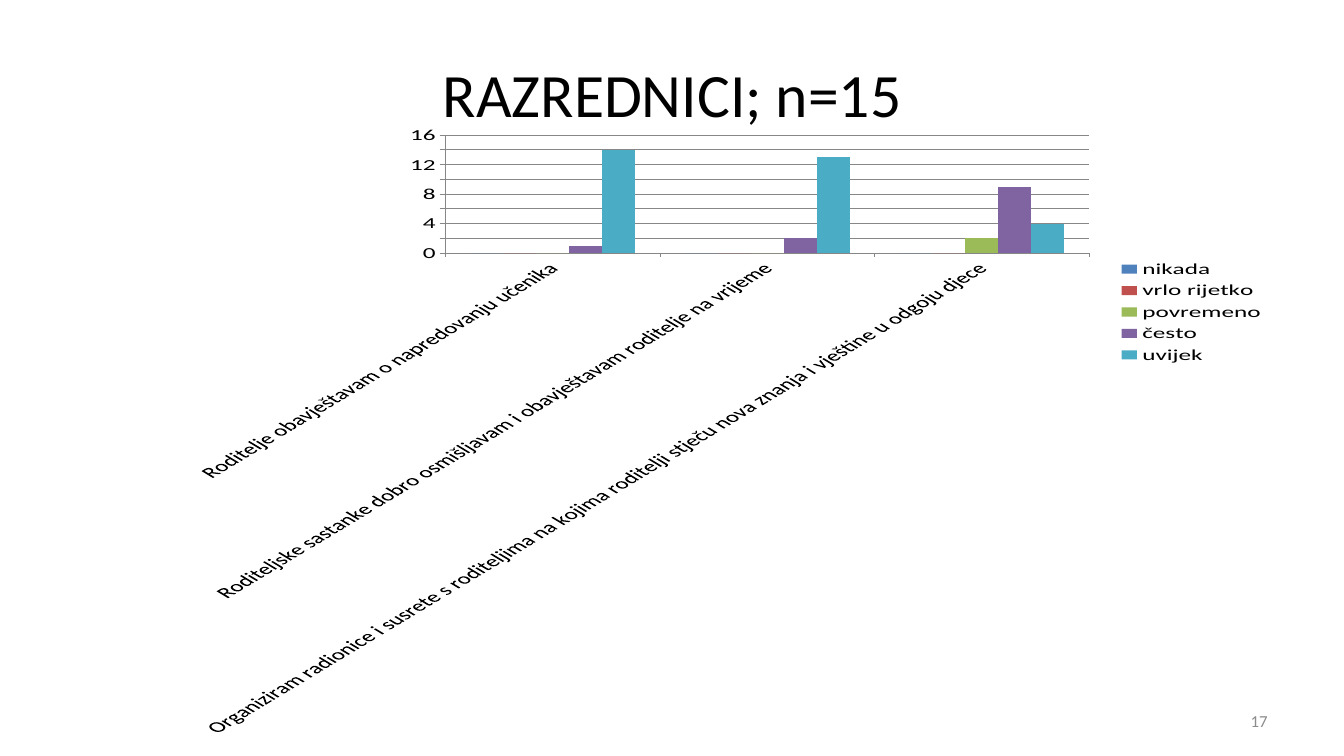
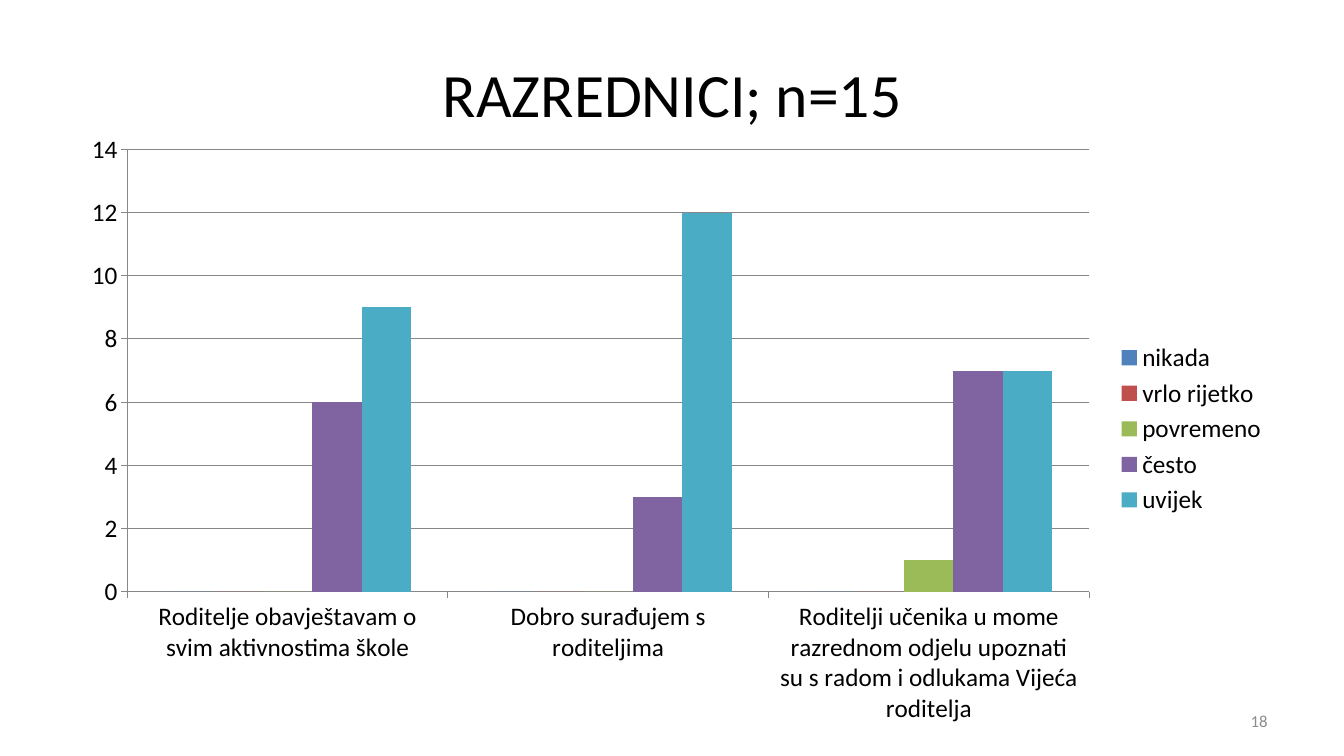
from pptx import Presentation
from pptx.chart.data import CategoryChartData
from pptx.dml.color import RGBColor
from pptx.enum.chart import XL_CHART_TYPE as ChartType, XL_LEGEND_POSITION as LegendPosition
from pptx.enum.chart import XL_TICK_MARK as TickMark
from pptx.enum.text import MSO_ANCHOR as Anchor, PP_ALIGN as Align
from pptx.util import Emu, Pt

PX = 9144
FONT = "Calibri"
BLACK, GREY, AXIS_GREY = "000000", "8C8C8C", "878787"
TITLE = "RAZREDNICI; n=15"
TITLE_AREA = (67, 30, 1200, 125)
NUMBER_AREA = (956, 695, 311, 40)
ANSWERS = [
    ("nikada", "4F81BD"),
    ("vrlo rijetko", "C0504D"),
    ("povremeno", "9BBB59"),
    ("često", "8064A2"),
    ("uvijek", "4BACC6"),
]
SLIDES = [
    {
        "number": 17,
        "area": (67, 125, 1200, 606),
        "top_value": 16,
        "statements": {
            "Roditelje obavještavam o napredovanju učenika": (0, 0, 0, 1, 14),
            "Roditeljske sastanke dobro osmišljavam i obavještavam roditelje na vrijeme":
                (0, 0, 0, 2, 13),
            "Organiziram radionice i susrete s roditeljima na kojima roditelji stječu "
            "nova znanja i vještine u odgoju djece": (0, 0, 2, 9, 4),
        },
    },
    {
        "number": 18,
        "area": (67, 121, 1200, 609),
        "top_value": 14,
        "statements": {
            "Roditelje obavještavam o svim aktivnostima škole": (0, 0, 0, 6, 9),
            "Dobro surađujem s roditeljima": (0, 0, 0, 3, 12),
            "Roditelji učenika u mome razrednom odjelu upoznati su s radom i odlukama "
            "Vijeća roditelja": (0, 0, 1, 7, 7),
        },
    },
]


def px(*lengths):
    """Turn pixel lengths into EMU."""
    return [Emu(length * PX) for length in lengths]


def color(value):
    """Turn a hex string into a colour."""
    return RGBColor.from_string(value)


def style_font(font, size, value):
    """Set the shared typeface with a size and colour."""
    font.name, font.size = FONT, Pt(size)
    font.color.rgb = color(value)


def write(shape, text, size, value, align):
    """Write one line of vertically centred text."""
    frame = shape.text_frame
    frame.word_wrap = True
    frame.vertical_anchor = Anchor.MIDDLE
    para = frame.paragraphs[0]
    para.text, para.alignment = text, align
    style_font(para.font, size, value)


def style_line(line):
    """Give an axis or gridline its thin grey stroke."""
    line.color.rgb = color(AXIS_GREY)
    line.width = Pt(0.75)


def add_answer_chart(page, area, statements, top_value):
    """Add a clustered column chart of answers per statement."""
    data = CategoryChartData(number_format="General")
    data.categories = list(statements)
    for (name, _), values in zip(ANSWERS, zip(*statements.values())):
        data.add_series(name, values)
    chart = page.shapes.add_chart(ChartType.COLUMN_CLUSTERED, *px(*area), data).chart
    style_font(chart.font, 18, BLACK)
    chart.has_title = False
    chart.has_legend = True
    chart.legend.position = LegendPosition.RIGHT
    chart.legend.include_in_layout = False

    plot = chart.plots[0]
    plot.gap_width, plot.overlap = 150, 0
    plot.vary_by_categories = False
    for series, (_, fill) in zip(plot.series, ANSWERS):
        series.format.fill.solid()
        series.format.fill.fore_color.rgb = color(fill)

    for axis in (chart.category_axis, chart.value_axis):
        axis.major_tick_mark, axis.minor_tick_mark = TickMark.OUTSIDE, TickMark.NONE
        style_line(axis.format.line)
    scale = chart.value_axis
    scale.minimum_scale, scale.maximum_scale, scale.major_unit = 0, top_value, 2
    scale.has_major_gridlines = True
    style_line(scale.major_gridlines.format.line)


def main():
    """Build and save the deck."""
    deck = Presentation()
    deck.slide_width, deck.slide_height = px(1333, 750)
    for content in SLIDES:
        page = deck.slides.add_slide(deck.slide_layouts[5])
        title = page.shapes.title
        title.left, title.top, title.width, title.height = px(*TITLE_AREA)
        write(title, TITLE, 44, BLACK, Align.CENTER)
        add_answer_chart(page, content["area"], content["statements"], content["top_value"])
        number = page.shapes.add_textbox(*px(*NUMBER_AREA))
        write(number, str(content["number"]), 12, GREY, Align.RIGHT)
    deck.save("out.pptx")


if __name__ == "__main__":
    main()
